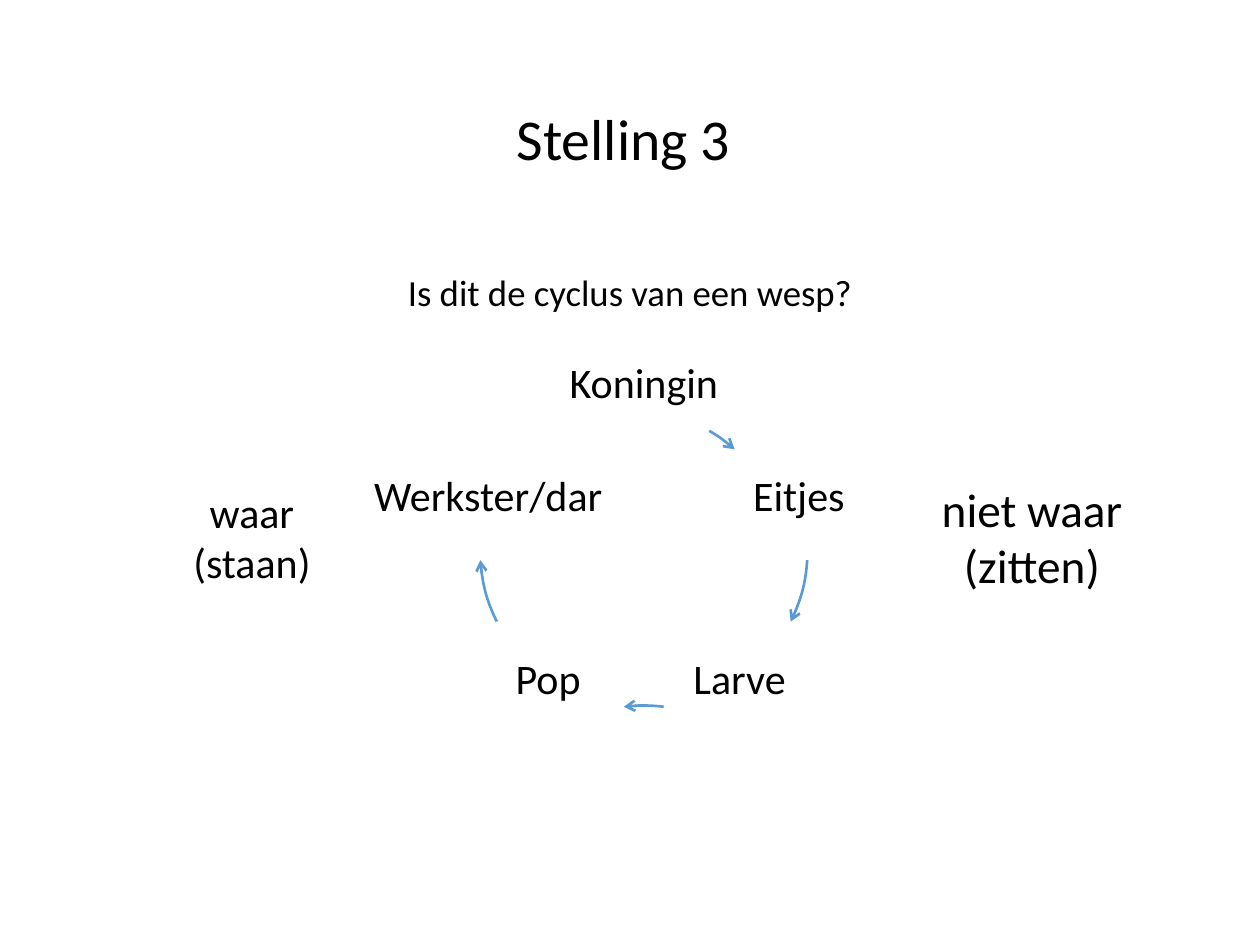
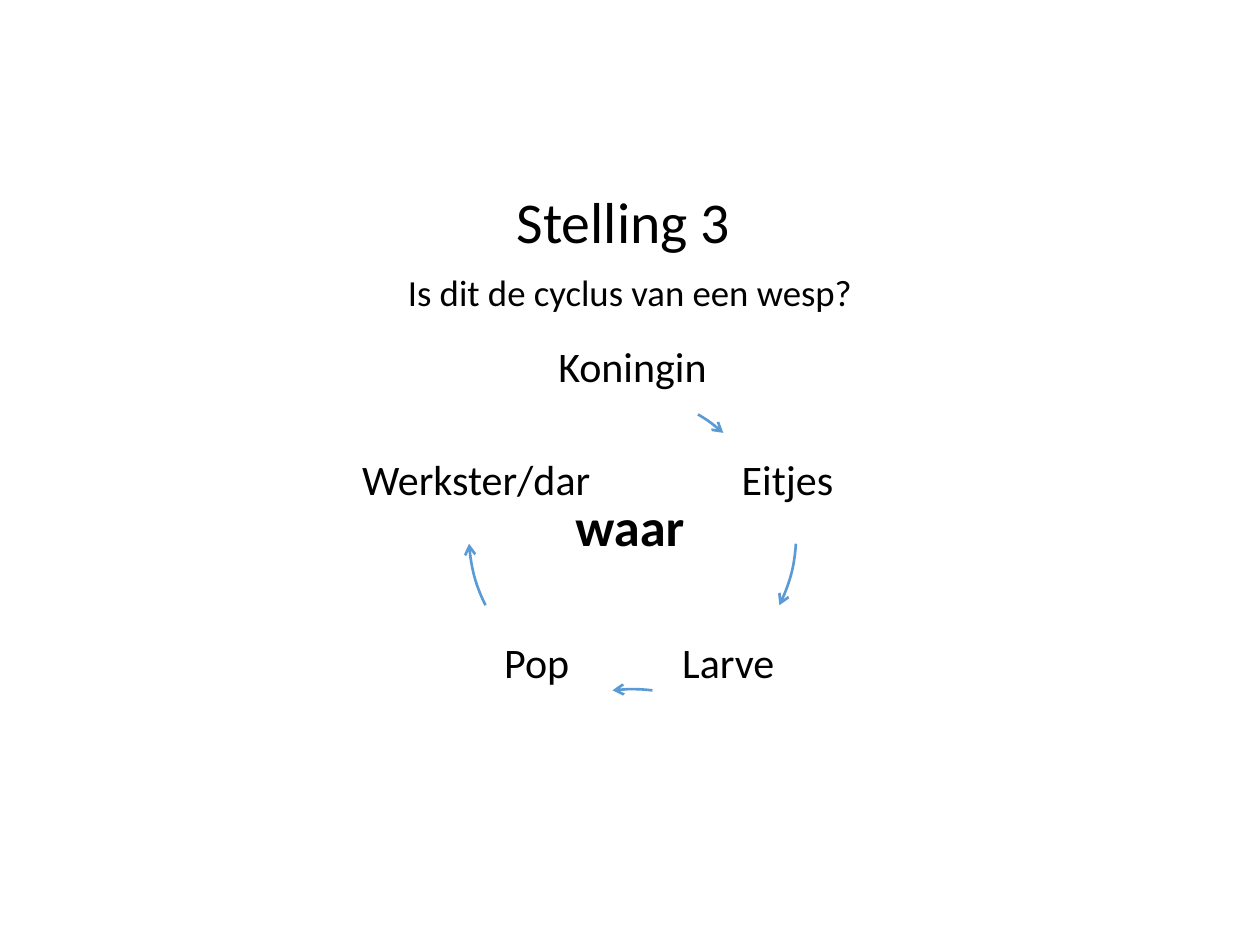
from dataclasses import dataclass
from math import cos, radians, sin

from lxml import etree
from pptx import Presentation
from pptx import util as u
from pptx.dml.color import RGBColor
from pptx.enum import text as t
from pptx.oxml import ns

PX = 9144  # 100 px to the inch
FONT = "Calibri"
BLACK = RGBColor(0x00, 0x00, 0x00)
BLUE = RGBColor(0x5B, 0x9B, 0xD5)
RADIUS = 130
DEGREE = 60000  # angle units in one degree


@dataclass(frozen=True)
class Box:
    left: int
    top: int
    width: int
    height: int

    def emu(self) -> list[int]:
        return [n * PX for n in (self.left, self.top, self.width, self.height)]


@dataclass(frozen=True)
class Stage:
    name: str
    mid: int
    top: int
    wide: bool = False


@dataclass(frozen=True)
class Arc:
    mid_x: int
    mid_y: int
    start: float  # degrees, clockwise from the right
    end: float
    tip: str = "tailEnd"


@dataclass(frozen=True)
class Label:
    words: str
    box: Box
    size: int
    bold: bool = False


@dataclass(frozen=True)
class Page:
    title: Box
    shift: tuple[int, int]  # offset of the cycle
    wide: int  # width of the widest stage
    labels: list[Label]


# Life cycle, shared by both slides
STAGES = [
    Stage("Koningin", 511, 276),
    Stage("Eitjes", 634, 366),
    Stage("Larve", 587, 511),
    Stage("Pop", 435, 511),
    Stage("Werkster/dar", 387, 366, True),
]
ARCS = [
    Arc(497, 454, 300.5, 311.5),
    Arc(511, 436, 3.8, 26.2),
    Arc(511, 690, 263, 277, "headEnd"),
    Arc(511, 436, 153.8, 176.2),
]
BODY = Box(69, 213, 862, 387)
PAGES = [
    Page(Box(69, 40, 862, 145), (0, 0), 241, [
        Label("waar\n(staan)", Box(60, 381, 280, 91), 24),
        Label("niet waar\n(zitten)", Box(679, 376, 280, 101), 27),
    ]),
    Page(Box(69, 124, 862, 109), (-9, -13), 256, [
        Label("waar", Box(360, 387, 280, 61), 30, True),
    ]),
]


def write(shape, words: str, *, size: int, bold: bool = False,
          line: float = 1.0, pad: int = 5, anchor=t.MSO_ANCHOR.TOP,
          fit=t.MSO_AUTO_SIZE.NONE) -> None:
    """Fill a shape with one centred paragraph."""
    frame = shape.text_frame
    frame.word_wrap = True
    frame.auto_size = fit
    frame.vertical_anchor = anchor
    frame.margin_left = frame.margin_right = 10 * PX
    frame.margin_top = frame.margin_bottom = pad * PX
    para = frame.paragraphs[0]
    para.text = words
    para.alignment = t.PP_ALIGN.CENTER
    para.line_spacing = line
    para.space_before = u.Pt(0)
    for run in para.runs:
        run.font.name = FONT
        run.font.size = u.Pt(size)
        run.font.bold = bold
        run.font.color.rgb = BLACK


def place(shape, box: Box) -> None:
    shape.left, shape.top, shape.width, shape.height = box.emu()


def plain(shape) -> None:
    """Take bullet and indent off the first paragraph."""
    props = shape.text_frame.paragraphs[0]._p.get_or_add_pPr()
    props.set("marL", "0")
    props.set("indent", "0")
    etree.SubElement(props, ns.qn("a:buNone"))


def arrow(slide, arc: Arc, shift: tuple[int, int]) -> None:
    """Draw part of a circle, in the circle's own box, with an arrowhead."""
    size = 2 * RADIUS
    turn = radians(arc.start)
    start = [round(RADIUS * (1 + part) * PX) for part in (cos(turn), sin(turn))]
    pen = slide.shapes.build_freeform(*start)
    pen.add_line_segments([(size * PX, size * PX)], close=False)
    shape = pen.convert_to_shape()
    place(shape, Box(arc.mid_x - RADIUS + shift[0],
                     arc.mid_y - RADIUS + shift[1], size, size))
    # Swap the straight segment for a true arc
    track = next(shape._element.iter(ns.qn("a:path")))
    track.set("w", str(size * PX))
    track.set("h", str(size * PX))
    point = next(track.iter(ns.qn("a:pt")))
    point.set("x", str(start[0]))
    point.set("y", str(start[1]))
    track.remove(track.find(ns.qn("a:lnTo")))
    etree.SubElement(track, ns.qn("a:arcTo"),
                     wR=str(RADIUS * PX), hR=str(RADIUS * PX),
                     stAng=str(round(arc.start * DEGREE)),
                     swAng=str(round((arc.end - arc.start) * DEGREE)))
    shape.shadow.inherit = False
    shape.fill.background()
    shape.line.color.rgb = BLUE
    shape.line.width = u.Pt(1.5)
    etree.SubElement(shape.line._get_or_add_ln(), ns.qn("a:" + arc.tip), type="arrow")


def cycle(slide, page: Page) -> None:
    for stage in STAGES:
        width = page.wide if stage.wide else 198
        box = Box(stage.mid - width // 2 + page.shift[0],
                  stage.top + page.shift[1], width, 59)
        write(slide.shapes.add_textbox(*box.emu()), stage.name, size=24,
              line=0.9, pad=10, anchor=t.MSO_ANCHOR.MIDDLE)
    for arc in ARCS:
        arrow(slide, arc, page.shift)


def build(deck, page: Page) -> None:
    slide = deck.slides.add_slide(deck.slide_layouts[1])
    # Title and question
    title, body = slide.shapes.title, slide.placeholders[1]
    place(title, page.title)
    write(title, "Stelling 3 ", size=33, line=0.9, anchor=t.MSO_ANCHOR.MIDDLE)
    place(body, BODY)
    plain(body)
    write(body, "Is dit de cyclus van een wesp?", size=21, line=0.9)
    # Cycle and answers
    cycle(slide, page)
    for label in page.labels:
        write(slide.shapes.add_textbox(*label.box.emu()), label.words,
              size=label.size, bold=label.bold,
              fit=t.MSO_AUTO_SIZE.SHAPE_TO_FIT_TEXT)


def main() -> None:
    deck = Presentation()
    deck.slide_width, deck.slide_height = 1000 * PX, 750 * PX
    for page in PAGES:
        build(deck, page)
    deck.save("out.pptx")


if __name__ == "__main__":
    main()
